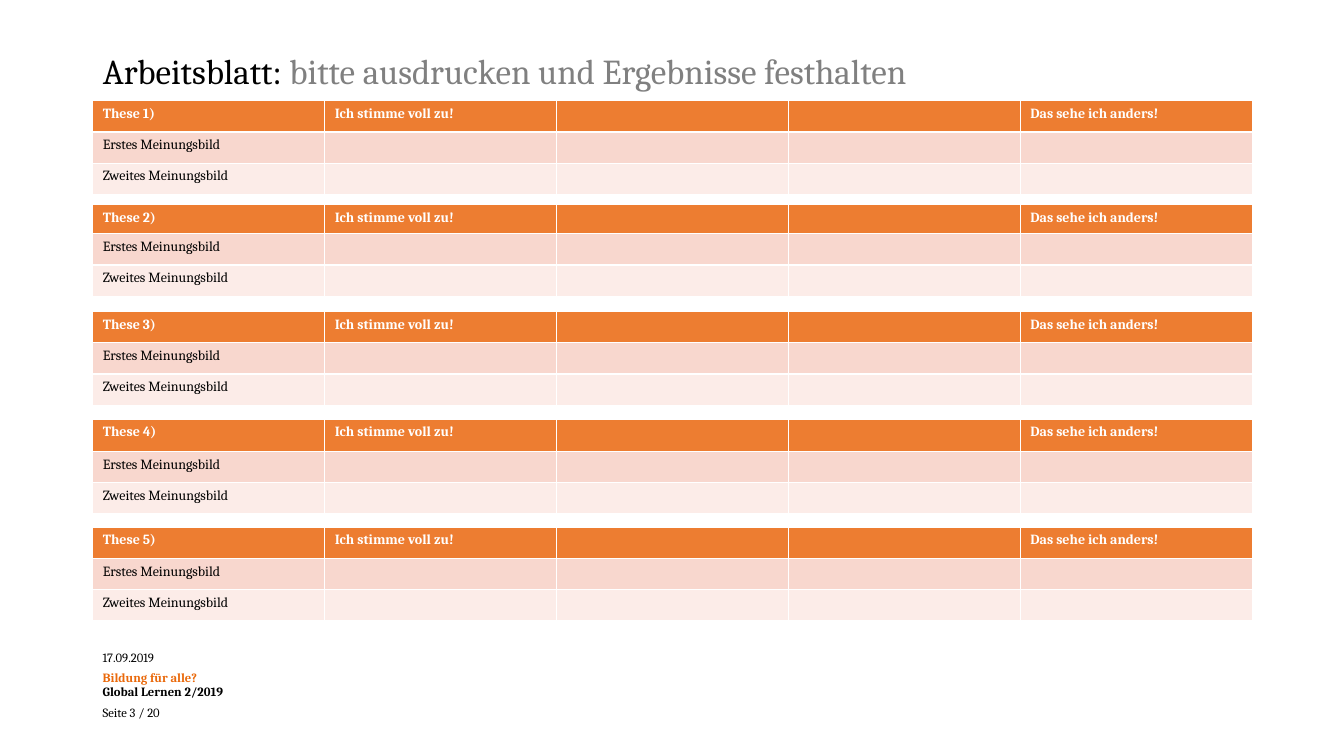
"""Build the worksheet slide with five opinion tables."""
from dataclasses import dataclass

from pptx import Presentation
from pptx.dml.color import RGBColor
from pptx.enum.text import MSO_ANCHOR, MSO_AUTO_SIZE, PP_ALIGN
from pptx.slide import Slide
from pptx.table import _Cell
from pptx.util import Inches, Pt


@dataclass(frozen=True)
class Theme:
    font: str = "Cambria"
    black: RGBColor = RGBColor(0, 0, 0)
    white: RGBColor = RGBColor(255, 255, 255)
    grey: RGBColor = RGBColor(0x80, 0x80, 0x80)
    accent: RGBColor = RGBColor(0xEA, 0x69, 0x0B)
    header: RGBColor = RGBColor(0xED, 0x7D, 0x31)
    first_row: RGBColor = RGBColor(0xF8, 0xD7, 0xCE)
    second_row: RGBColor = RGBColor(0xFC, 0xEC, 0xE8)
    title_size: float = 25
    table_size: float = 10
    footer_size: float = 9


@dataclass(frozen=True)
class Thesis:
    number: int
    top: float
    header_height: float = 0.31


@dataclass(frozen=True)
class FooterLine:
    text: str
    color: RGBColor
    bold: bool = False
    space_after: float = 0


THEME = Theme()
LEFT, WIDTH = 0.92, 11.5
COLUMNS = 5
ROW_HEIGHT = 0.31
ROW_FILLS = (THEME.header, THEME.first_row, THEME.second_row)
THESES = (
    Thesis(1, 1.0),
    Thesis(2, 2.03, 0.29),
    Thesis(3, 3.09),
    Thesis(4, 4.16, 0.32),
    Thesis(5, 5.23),
)
TITLE = (
    ("Arbeitsblatt:", THEME.black),
    (" bitte ausdrucken und Ergebnisse festhalten", THEME.grey),
)
FOOTER = (
    FooterLine("17.09.2019", THEME.black, space_after=4.5),
    FooterLine("Bildung für alle?", THEME.accent, bold=True),
    FooterLine("Global Lernen 2/2019", THEME.black, bold=True, space_after=4.5),
    FooterLine("Seite 3 / 20", THEME.black),
)


def style_font(para, size: float, color: RGBColor, bold: bool = False) -> None:
    """Set the typeface, size, colour and weight of a paragraph."""
    para.font.name = THEME.font
    para.font.size = Pt(size)
    para.font.color.rgb = color
    para.font.bold = bold


def add_title(page: Slide) -> None:
    """Place and fill the two-coloured title."""
    title = page.shapes.title
    title.left, title.top = Inches(LEFT), Inches(0.46)
    title.width, title.height = Inches(WIDTH), Inches(0.54)
    frame = title.text_frame
    frame.auto_size = MSO_AUTO_SIZE.NONE
    frame.vertical_anchor = MSO_ANCHOR.MIDDLE
    para = frame.paragraphs[0]
    para.alignment = PP_ALIGN.LEFT
    para.line_spacing = 0.9
    para.font.name = THEME.font
    para.font.size = Pt(THEME.title_size)
    for text, color in TITLE:
        span = para.add_run()
        span.text = text
        span.font.color.rgb = color


def fill_cell(cell: _Cell, text: str, fill: RGBColor, is_header: bool) -> None:
    """Fill and label one table cell."""
    cell.fill.solid()
    cell.fill.fore_color.rgb = fill
    cell.text = text
    para = cell.text_frame.paragraphs[0]
    color = THEME.white if is_header else THEME.black
    style_font(para, THEME.table_size, color, is_header)
    para._p.get_or_add_endParaRPr().set("sz", str(THEME.table_size * 100))


def add_thesis_table(page: Slide, thesis: Thesis) -> None:
    """Draw the opinion table of one thesis."""
    labels = (
        (f"These {thesis.number})", "Ich stimme voll zu!", "", "", "Das sehe ich anders!"),
        ("Erstes Meinungsbild", "", "", "", ""),
        ("Zweites Meinungsbild", "", "", "", ""),
    )
    heights = (thesis.header_height, ROW_HEIGHT, ROW_HEIGHT)
    table = page.shapes.add_table(
        len(labels), COLUMNS, Inches(LEFT), Inches(thesis.top),
        Inches(WIDTH), Inches(sum(heights)),
    ).table
    for column in table.columns:
        column.width = Inches(WIDTH / COLUMNS)
    for row_index, (texts, height, fill) in enumerate(zip(labels, heights, ROW_FILLS)):
        row = table.rows[row_index]
        row.height = Inches(height)
        for cell, text in zip(row.cells, texts):
            fill_cell(cell, text, fill, is_header=row_index == 0)


def add_footer(page: Slide) -> None:
    """Write the date, publication and page lines."""
    box = page.shapes.add_textbox(Inches(LEFT), Inches(6.41), Inches(2.6), Inches(0.81))
    frame = box.text_frame
    frame.word_wrap = True
    frame.auto_size = MSO_AUTO_SIZE.SHAPE_TO_FIT_TEXT
    for index, line in enumerate(FOOTER):
        para = frame.add_paragraph() if index else frame.paragraphs[0]
        para.text = line.text
        para.line_spacing = Pt(10)
        para.space_after = Pt(line.space_after)
        style_font(para, THEME.footer_size, line.color, line.bold)


def main() -> None:
    """Create and save the deck."""
    deck = Presentation()
    deck.slide_width, deck.slide_height = Inches(13.33), Inches(7.5)
    page = deck.slides.add_slide(deck.slide_layouts.get_by_name("Title Only"))
    add_footer(page)
    add_title(page)
    for thesis in THESES:
        add_thesis_table(page, thesis)
    deck.save("out.pptx")


if __name__ == "__main__":
    main()
